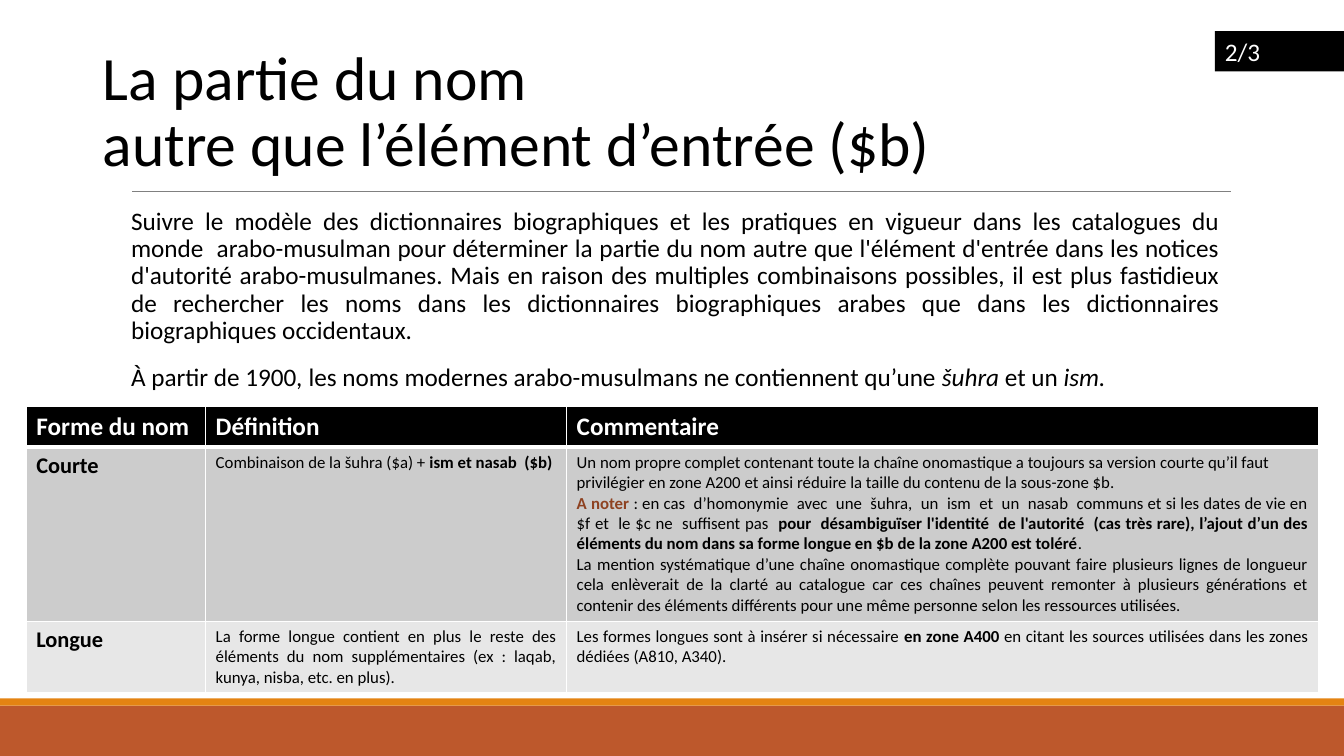
from lxml.etree import SubElement
from pptx import Presentation
from pptx.dml.color import RGBColor
from pptx.enum.shapes import MSO_CONNECTOR, MSO_SHAPE
from pptx.enum.text import MSO_ANCHOR, MSO_AUTO_SIZE, PP_ALIGN
from pptx.oxml.ns import qn
from pptx.util import Inches, Pt

FONT = "Calibri"
COLORS = {
    "black": "000000", "white": "FFFFFF", "note": "8E4221", "rule": "808080",
    "band": "BD582C", "stripe": "E48312", "dark_row": "CCCCCC", "light_row": "E7E7E7",
}
LEFT, JUST = PP_ALIGN.LEFT, PP_ALIGN.JUSTIFY

# A paragraph is (alignment, [(text, style), ...]); styles: b bold, i italic, n note colour
TITLE = [
    (LEFT, [("La partie du nom", "")]),
    (LEFT, [("autre que l’élément d’entrée ($b)", "")]),
]
BODY = [
    (JUST, [("Suivre le modèle des dictionnaires biographiques et les pratiques en vigueur dans "
             "les catalogues du monde  arabo-musulman pour déterminer la partie du nom autre que "
             "l'élément d'entrée dans les notices d'autorité arabo-musulmanes. Mais en raison des "
             "multiples combinaisons possibles, il est plus fastidieux de rechercher les noms dans "
             "les dictionnaires biographiques arabes que dans les dictionnaires biographiques "
             "occidentaux. ", "")]),
    (JUST, [("À partir de 1900", ""), (", ", "i"),
            ("les noms modernes arabo-musulmans ne contiennent qu’une ", ""),
            ("šuhra ", "i"), ("et un ", ""), ("ism.", "i")]),
]
PAGE = [(LEFT, [("2/3", "")])]
HEADERS = ["Forme du nom", "Définition", "Commentaire"]
FORMS = [
    ("Courte ",
     [(LEFT, [("Combinaison de la šuhra ($a) + ", ""), ("ism et nasab  ($b)", "b")])],
     [(LEFT, [("Un nom propre complet contenant toute la chaîne onomastique a toujours sa version "
               "courte qu’il faut privilégier en zone A200 et ainsi réduire la taille du contenu "
               "de la sous-zone $b.", "")]),
      (JUST, [("A noter ", "bn"),
              (": en cas  d’homonymie  avec  une  šuhra,  un  ism  et  un  nasab  communs et si "
               "les dates de vie en $f et  le $c ne  suffisent pas  ", ""),
              ("pour  désambiguïser l'identité  de l'autorité  (cas très rare), l’ajout d’un des "
               "éléments du nom dans sa forme longue en $b de la zone A200 est toléré", "b"),
              (".", "")]),
      (JUST, [("La mention systématique d’une chaîne onomastique complète pouvant faire plusieurs "
               "lignes de longueur cela enlèverait de la clarté au catalogue car ces chaînes "
               "peuvent remonter à plusieurs générations et contenir des éléments différents pour "
               "une même personne selon les ressources utilisées.", "")])]),
    ("Longue",
     [(JUST, [("La forme longue contient en plus le reste des éléments du nom supplémentaires "
               "(ex : laqab, kunya, nisba, etc. en plus). ", "")])],
     [(JUST, [("Les formes longues sont à insérer si nécessaire ", ""), ("en zone A400", "b"),
              (" en citant les sources utilisées dans les zones dédiées (A810, A340).", "")])]),
]
COL_WIDTHS = [1.78, 3.58, 7.46]
ROW_HEIGHTS = [0.39, 1.73, 0.7]


def rgb(name):
    return RGBColor.from_string(COLORS[name])


def write(tf, paragraphs, size, color="black", spacing=1.0):
    for i, (align, runs) in enumerate(paragraphs):
        p = tf.paragraphs[0] if i == 0 else tf.add_paragraph()
        p.alignment, p.line_spacing = align, spacing
        p.space_before = p.space_after = Pt(0)
        for text, style in runs:
            r = p.add_run()
            r.text = text
            r.font.name, r.font.size = FONT, Pt(size)
            r.font.bold, r.font.italic = "b" in style, "i" in style
            r.font.color.rgb = rgb("note" if "n" in style else color)


def place(sp, x, y, w, h):
    sp.left, sp.top, sp.width, sp.height = (Inches(v) for v in (x, y, w, h))


def add_rect(s, x, y, w, h, color):
    sp = s.shapes.add_shape(MSO_SHAPE.RECTANGLE, *(Inches(v) for v in (x, y, w, h)))
    sp.shadow.inherit = False
    sp.fill.solid()
    sp.fill.fore_color.rgb = rgb(color)
    sp.line.fill.background()
    return sp


def set_borders(cell, top, bottom):
    """White cell borders; top and bottom widths in points, sides 1 point."""
    tcPr = cell._tc.get_or_add_tcPr()
    for i, (side, width) in enumerate([("L", 1), ("R", 1), ("T", top), ("B", bottom)]):
        ln = SubElement(tcPr, qn(f"a:ln{side}"), w=str(Pt(width)))
        SubElement(SubElement(ln, qn("a:solidFill")), qn("a:srgbClr"), val=COLORS["white"])
        tcPr.insert(i, ln)


def add_heading(s):
    title = s.shapes.title
    place(title, 0.92, 0.4, 11.5, 1.45)
    tf = title.text_frame
    tf.word_wrap, tf.auto_size = True, MSO_AUTO_SIZE.NONE
    tf.vertical_anchor = MSO_ANCHOR.MIDDLE
    write(tf, TITLE, 44, spacing=0.9)


def add_body(s):
    body = s.placeholders[1]
    place(body, 1.2, 2.02, 11, 4.4)
    tf = body.text_frame
    tf.word_wrap, tf.auto_size = True, MSO_AUTO_SIZE.NONE
    tf.vertical_anchor = MSO_ANCHOR.TOP
    write(tf, BODY, 18, spacing=0.9)
    for p in tf.paragraphs:
        p.space_before, p.space_after = Pt(12), Pt(2)
        pPr = p._p.get_or_add_pPr()
        pPr.set("marL", "0")
        pPr.set("indent", "0")
        SubElement(pPr, qn("a:buNone"))


def add_decor(s):
    add_rect(s, 0, 7, 13.33, 0.5, "band")
    add_rect(s, 0, 6.93, 13.33, 0.07, "stripe")
    rule = s.shapes.add_connector(MSO_CONNECTOR.STRAIGHT, Inches(1.31), Inches(1.9),
                                  Inches(12.21), Inches(1.9))
    rule.line.color.rgb, rule.line.width = rgb("rule"), Pt(0.5)
    SubElement(rule._element.spPr, qn("a:effectLst"))
    badge = add_rect(s, 12.05, 0.31, 1.28, 0.4, "black")
    badge.text_frame.vertical_anchor = MSO_ANCHOR.TOP
    write(badge.text_frame, PAGE, 18, "white")


def add_forms_table(s):
    frame = s.shapes.add_table(len(ROW_HEIGHTS), len(COL_WIDTHS), Inches(0.26), Inches(4.03),
                               Inches(sum(COL_WIDTHS)), Inches(sum(ROW_HEIGHTS)))
    table = frame.table
    for col, width in zip(table.columns, COL_WIDTHS):
        col.width = Inches(width)
    for row, height in zip(table.rows, ROW_HEIGHTS):
        row.height = Inches(height)
    rows = [[[(LEFT, [(text, "b")])] for text in HEADERS]]
    rows += [[[(LEFT, [(name, "b")])], meaning, comment] for name, meaning, comment in FORMS]
    fills = ["black", "dark_row", "light_row"]
    for i, row in enumerate(rows):
        for j, paragraphs in enumerate(row):
            cell = table.cell(i, j)
            set_borders(cell, 3 if i == 1 else 1, 3 if i == 0 else 1)
            cell.fill.solid()
            cell.fill.fore_color.rgb = rgb(fills[i])
            cell.vertical_anchor = MSO_ANCHOR.MIDDLE if i == 0 else MSO_ANCHOR.TOP
            size = 18 if i == 0 else 16 if j == 0 else 12
            write(cell.text_frame, paragraphs, size, "white" if i == 0 else "black")


def main():
    prs = Presentation()
    prs.slide_width, prs.slide_height = Inches(13.33), Inches(7.5)
    s = prs.slides.add_slide(prs.slide_layouts[1])
    add_heading(s)
    add_body(s)
    add_decor(s)
    add_forms_table(s)
    prs.save("out.pptx")


if __name__ == "__main__":
    main()
